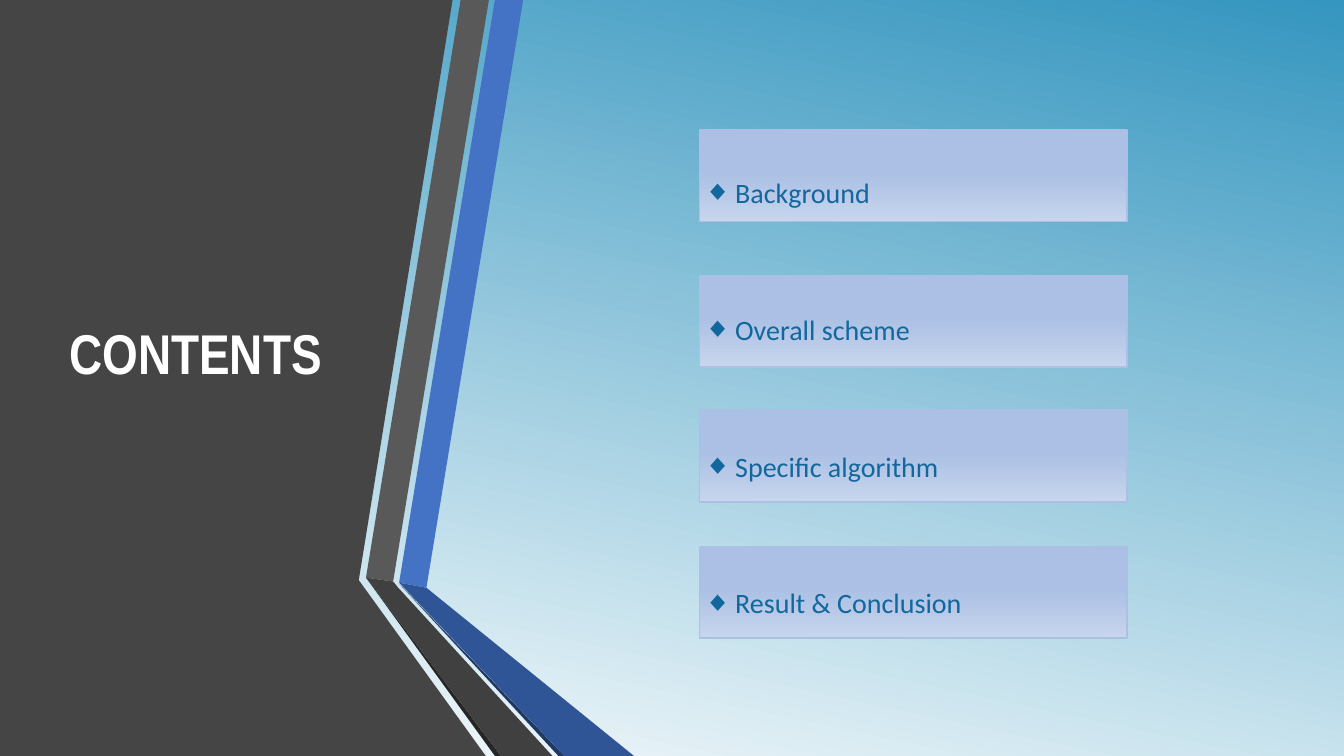
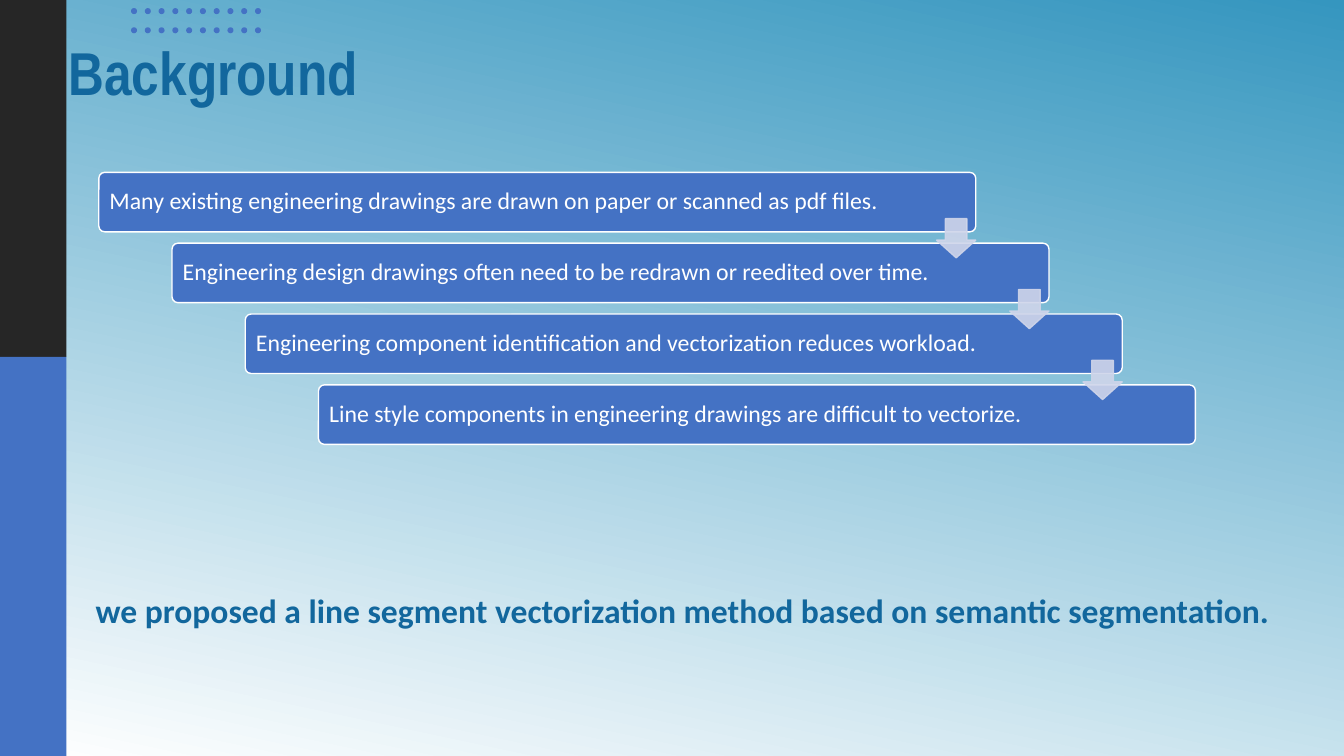
from copy import deepcopy

from lxml import etree
from pptx import Presentation
from pptx.dml.color import RGBColor
from pptx.enum import shapes as kinds, text as txt
from pptx.oxml.ns import qn
from pptx.util import Pt

WIDE, HIGH = 960, 540
HUES = {
    "sky": "3596BF", "white": "FFFFFF", "panel": "454545", "blue": "4472C4",
    "deep": "2F5597", "navy": "203864", "grey": "595959", "dark": "404040",
    "black": "262626", "ink": "12679D", "pale": "ABC0E4", "light": "C7D5ED",
    "arrow": "CFD5EA",
}
FRAME = {"auto_size": txt.MSO_AUTO_SIZE.NONE, "word_wrap": True}
MIDDLE = {**FRAME, "vertical_anchor": txt.MSO_ANCHOR.MIDDLE}
LEFT = {"alignment": txt.PP_ALIGN.LEFT, "space_before": Pt(0)}
TITLE = {"name": "Arial Narrow", "bold": True}
BODY = {"name": "Calibri", "bold": False}


# Shared helpers
def hue(name):
    return RGBColor.from_string(HUES[name])


def apply(item, style):
    for key, value in style.items():
        setattr(item, key, value)


def place(shape, box):
    for key, value in zip(("left", "top", "width", "height"), box):
        setattr(shape, key, Pt(value))


def shade(fill, stops, angle):
    """Fill with colour stops; the angle runs clockwise."""
    fill.gradient()
    fill.gradient_angle = 360 - angle
    gs = fill.gradient_stops
    if len(stops) > len(gs):
        first = fill._fill._gradFill.find(qn("a:gsLst"))[0]
        first.addnext(deepcopy(first))
        gs = fill.gradient_stops
    for stop, (spot, name) in zip(gs, stops):
        stop.position = spot
        stop.color.rgb = hue(name)


def paint(shape, fill=None, line=None):
    shape.shadow.inherit = False
    if fill:
        shape.fill.solid()
        shape.fill.fore_color.rgb = hue(fill)
    if line:
        shape.line.color.rgb = hue(line)
        shape.line.width = Pt(1)
    else:
        shape.line.fill.background()
    return shape


def draw(slide, kind, box, fill=None, line=None):
    shape = slide.shapes.add_shape(kind, *map(Pt, box))
    return paint(shape, fill, line)


def write(shape, lines, size, color, font, frame, para):
    body = shape.text_frame
    apply(body, frame)
    body.text = "\n".join(lines)
    for p in body.paragraphs:
        apply(p, {**LEFT, **para})
        apply(p.font, {**font, "size": Pt(size)})
        p.font.color.rgb = hue(color)


def raise_up(slide, shape):
    slide.shapes._spTree.append(shape._element)


def head(slide, box, words, size, color):
    title = slide.shapes.title
    place(title, box)
    write(title, [words], size, color, TITLE, MIDDLE,
          {"line_spacing": 0.9, "space_after": Pt(6)})
    raise_up(slide, title)


# Contents slide
FOLDS = [
    ("panel", [(0, 0), (323.3, 0), (256.3, 414.4), (347, 540), (0, 540)]),
    ("blue", [(285.1, 416.2), (304.6, 419.8), (373.7, 0), (353.5, 0)]),
    ("grey", [(349.2, 0), (329, 0), (261.4, 412.6), (280.8, 415.4)]),
    ("black", [(261.4, 412.6), (353.5, 540), (357.8, 540)]),
    ("navy", [(285.1, 416.9), (398.9, 540), (403.2, 540)]),
    ("deep", [(285.1, 416.2), (403.2, 540), (452.9, 540), (304.6, 419.8)]),
    ("dark", [(394.6, 540), (284.4, 419.8), (280.8, 415.4), (261.4, 412.6),
              (357.8, 540)]),
]


def ribbon(slide, left, top):
    for name, dots in FOLDS:
        (x, y), *rest = [(round(100 * a), round(100 * b)) for a, b in dots]
        pen = slide.shapes.build_freeform(x, y, scale=Pt(1) / 100)
        pen.add_line_segments(rest, close=True)
        paint(pen.convert_to_shape(Pt(left), Pt(top)), name)


def agenda(slide, box, items):
    x, y, w, h = box
    for drop in (297.3, 200.1, 103.7, 0):
        bar = draw(slide, kinds.MSO_SHAPE.RECTANGLE, (x, y + drop, w, h),
                   line="pale")
        shade(bar.fill, [(0, "pale"), (0.45, "pale"), (1, "light")], 90)
    # Bulleted list over the bars
    body = slide.placeholders[1]
    place(body, (x - 4.3, y - 38.9, 219.6, 392.4))
    write(body, items, 20, "ink", BODY,
          {**FRAME, "vertical_anchor": txt.MSO_ANCHOR.TOP},
          {"line_spacing": 3.82, "space_after": Pt(6)})
    for p in body.text_frame.paragraphs:
        props = p._p.get_or_add_pPr()
        apply_indent = {"marL": Pt(22.5), "indent": -Pt(22.5)}
        for key, value in apply_indent.items():
            props.set(key, str(int(value)))
        mark = etree.SubElement(props, qn("a:buChar"))
        mark.set("char", "◆")
        props.insert_element_before(mark, "a:tabLst", "a:defRPr", "a:extLst")
    raise_up(slide, body)


# Background slide
def side(slide, box, split):
    x, y, w, h = box
    rect = kinds.MSO_SHAPE.RECTANGLE
    draw(slide, rect, (x, y, w, split), "black")
    draw(slide, rect, (x, y + split, w, h - split), "blue")


def dots(slide, left, top):
    for n in range(20):
        row, col = divmod(n, 10)
        draw(slide, kinds.MSO_SHAPE.OVAL,
             (left + 9.84 * col, top + 13.7 * row, 4.3, 4.3), "blue")


def steps(slide, box, items):
    x, y, w, h = box
    spots = [(x + 52.3 * n, y + 50.6 * n) for n in range(len(items))]
    inset = {f"margin_{edge}": Pt(6.4)
             for edge in ("left", "top", "right", "bottom")}
    for (a, b), words in zip(spots, items):
        bar = draw(slide, kinds.MSO_SHAPE.ROUNDED_RECTANGLE, (a, b, w, h),
                   "blue", "white")
        bar.adjustments[0] = 0.1
        write(bar, [words], 17, "white", BODY, {**MIDDLE, **inset},
              {"line_spacing": 0.9})
    # Arrows from each step to the next
    for a, b in spots[:-1]:
        arrow = draw(slide, kinds.MSO_SHAPE.DOWN_ARROW,
                     (a + w - 28, b + 33.1, 28, 28), "arrow", "arrow")
        arrow.adjustments[0], arrow.adjustments[1] = 0.55, 0.45
        for tint in list(arrow._element.spPr.iter(qn("a:srgbClr"))):
            etree.SubElement(tint, qn("a:alpha")).set("val", "90000")


def claim(slide, box, words):
    note = slide.shapes.add_textbox(*map(Pt, box))
    write(note, [words], 24, "ink", {**BODY, "bold": True}, FRAME,
          {"line_spacing": 2.0})


def main():
    deck = Presentation()
    deck.slide_width, deck.slide_height = Pt(WIDE), Pt(HIGH)
    shade(deck.slide_master.background.fill, [(0, "sky"), (1, "white")], 102)

    slide = deck.slides.add_slide(deck.slide_layouts[1])
    ribbon(slide, 0, 0)
    head(slide, (42.5, 54, 218.9, 401.8), "CONTENTS", 40, "white")
    agenda(slide, (499.7, 92.9, 305.3, 65.5),
           ["Background", "Overall scheme", "Specific algorithm",
            "Result & Conclusion"])

    slide = deck.slides.add_slide(deck.slide_layouts[5])
    side(slide, (0, 0, 47.5, HIGH), 254.9)
    dots(slide, 93.6, 5.8)
    head(slide, (41.8, 33.8, 828, 40.3), "Background", 43.2, "ink")
    claim(slide, (61.2, 388.8, 866.2, 57.6),
          "we proposed a line segment vectorization method based on "
          "semantic segmentation.")
    steps(slide, (70.6, 123.1, 626.4, 42.5), [
        "Many existing engineering drawings are drawn on paper or scanned "
        "as pdf files.",
        "Engineering design drawings often need to be redrawn or reedited "
        "over time.",
        "Engineering component identification and vectorization reduces "
        "workload.",
        "Line style components in engineering drawings are difficult to "
        "vectorize.",
    ])
    deck.save("out.pptx")


if __name__ == "__main__":
    main()
